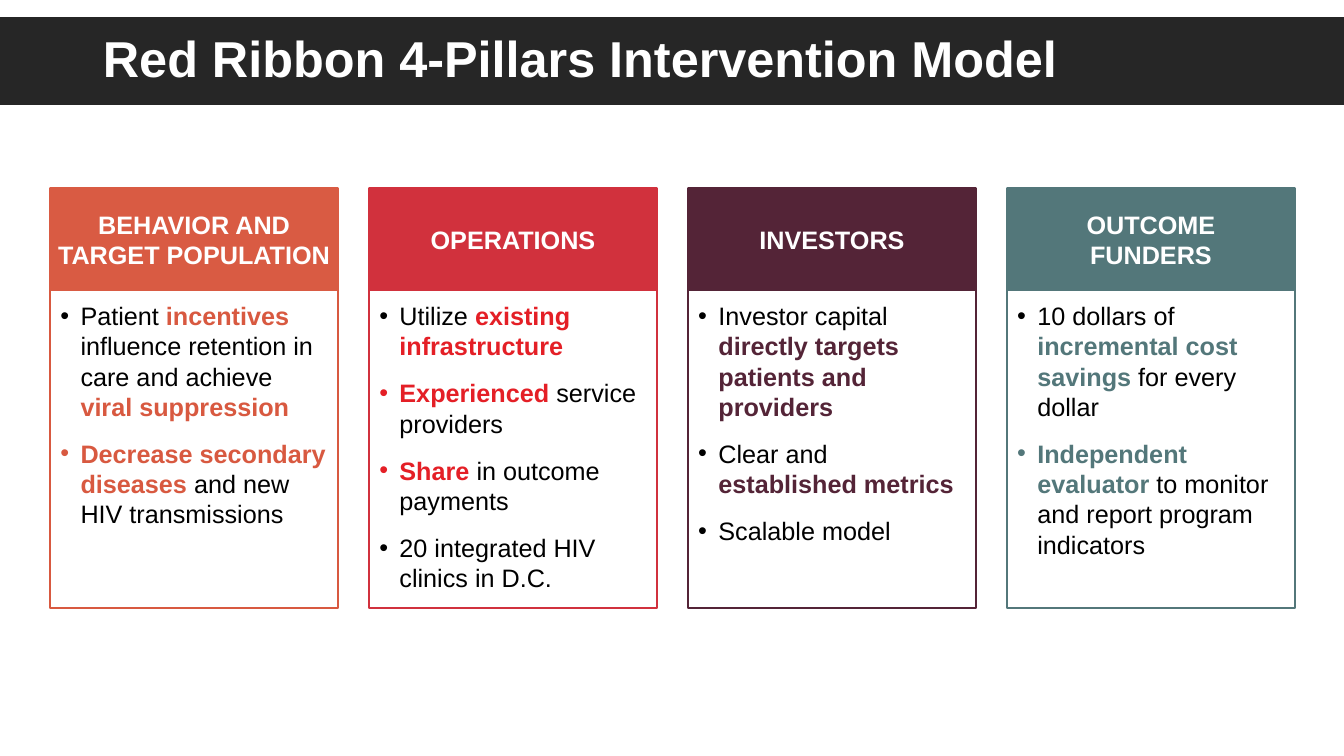
import pptx
import pptx.dml.color
import pptx.enum.shapes
import pptx.enum.text
import pptx.oxml
import pptx.util
from pptx.util import Inches

PILLARS = [
    ("BEHAVIOR AND TARGET POPULATION", "D95B43", "D85940", "D85940", [
        "Patient *incentives* influence retention in care and achieve *viral suppression*",
        "*Decrease secondary diseases *and new HIV transmissions",
    ]),
    ("OPERATIONS", "D1313D", "D1313D", "E41F26", [
        "Utilize *existing infrastructure*",
        "*Experienced* service providers",
        "*Share *in outcome payments",
        "20 integrated HIV clinics in D.C.",
    ]),
    ("INVESTORS", "542437", "542437", "542437", [
        "Investor capital *directly targets patients and providers*",
        "Clear and *established metrics*",
        "Scalable model",
    ]),
    ("OUTCOME\nFUNDERS", "53777A", "53777A", "53777A", [
        "10 dollars of *incremental cost savings* for every dollar",
        "*Independent evaluator *to monitor and report program indicators",
    ]),
]


def colour(value):
    return pptx.dml.color.RGBColor.from_string(value)


def style_font(font, size, value, bold):
    font.name = "Arial"
    font.size = pptx.util.Pt(size)
    font.bold = bold
    font.color.rgb = colour(value)


def add_box(page, left, top, width, height, fill=None, line=None):
    box = page.shapes.add_shape(
        pptx.enum.shapes.MSO_SHAPE.RECTANGLE,
        Inches(left), Inches(top), Inches(width), Inches(height))
    box.shadow.inherit = False
    if fill:
        box.fill.solid()
        box.fill.fore_color.rgb = colour(fill)
    else:
        box.fill.background()
    if line:
        box.line.color.rgb = colour(line)
        box.line.width = pptx.util.Pt(1.5)
    else:
        box.line.fill.background()
    return box


def set_frame(frame, side, edge, anchor):
    frame.word_wrap = True
    frame.margin_left = frame.margin_right = Inches(side)
    frame.margin_top = frame.margin_bottom = Inches(edge)
    frame.vertical_anchor = anchor


def add_bullet(para):
    properties = para._p.get_or_add_pPr()
    properties.set("marL", str(Inches(0.2)))
    properties.set("indent", str(-Inches(0.2)))
    namespace = "http://schemas.openxmlformats.org/drawingml/2006/main"
    for tag in (f'<a:buFont xmlns:a="{namespace}" typeface="Arial"/>',
                f'<a:buChar xmlns:a="{namespace}" char="•"/>'):
        properties.append(pptx.oxml.parse_xml(tag))


def add_title(page, left, top, width, height):
    band = add_box(page, left, top, width, height, fill="262626")
    title = page.shapes.title
    title.element.addprevious(band.element)
    title.left, title.top = Inches(left + 0.92), Inches(top)
    title.width, title.height = Inches(11.5), Inches(height)
    frame = title.text_frame
    frame.text = "Red Ribbon 4-Pillars Intervention Model"
    set_frame(frame, 0.1, 0.05, pptx.enum.text.MSO_ANCHOR.MIDDLE)
    para = frame.paragraphs[0]
    para.alignment = pptx.enum.text.PP_ALIGN.LEFT
    para.line_spacing = 0.9
    style_font(para.runs[0].font, 36, "FFFFFF", True)


def add_pillar(page, left, top, width, height, pillar):
    heading, fill, outline, accent, points = pillar
    head_height = 1.01
    body = add_box(page, left, top + head_height, width, height - head_height, line=outline)
    frame = body.text_frame
    set_frame(frame, 0.1, 0.1, pptx.enum.text.MSO_ANCHOR.TOP)
    for index, point in enumerate(points):
        para = frame.add_paragraph() if index else frame.paragraphs[0]
        para.alignment = pptx.enum.text.PP_ALIGN.LEFT
        para.space_after = pptx.util.Pt(12)
        add_bullet(para)
        for position, words in enumerate(point.split("*")):
            if words:
                strong = position % 2 == 1
                span = para.add_run()
                span.text = words
                style_font(span.font, 18, accent if strong else "000000", strong)

    head = add_box(page, left, top, width, head_height, fill=fill, line=fill)
    frame = head.text_frame
    frame.text = heading
    set_frame(frame, 0, 0.05, pptx.enum.text.MSO_ANCHOR.MIDDLE)
    for para in frame.paragraphs:
        para.alignment = pptx.enum.text.PP_ALIGN.CENTER
        style_font(para.runs[0].font, 18, "FFFFFF", True)


def add_pillars(page, left, top, width, height):
    pillar_width = 2.85
    step = (width - pillar_width) / (len(PILLARS) - 1)
    for index, pillar in enumerate(PILLARS):
        add_pillar(page, left + index * step, top, pillar_width, height, pillar)


def main():
    deck = pptx.Presentation()
    deck.slide_width, deck.slide_height = Inches(13.33), Inches(7.5)
    page = deck.slides.add_slide(deck.slide_layouts.get_by_name("Title Only"))
    add_title(page, 0, 0.17, 13.33, 0.87)
    add_pillars(page, 0.5, 1.87, 12.34, 4.16)
    deck.save("out.pptx")


if __name__ == "__main__":
    main()
